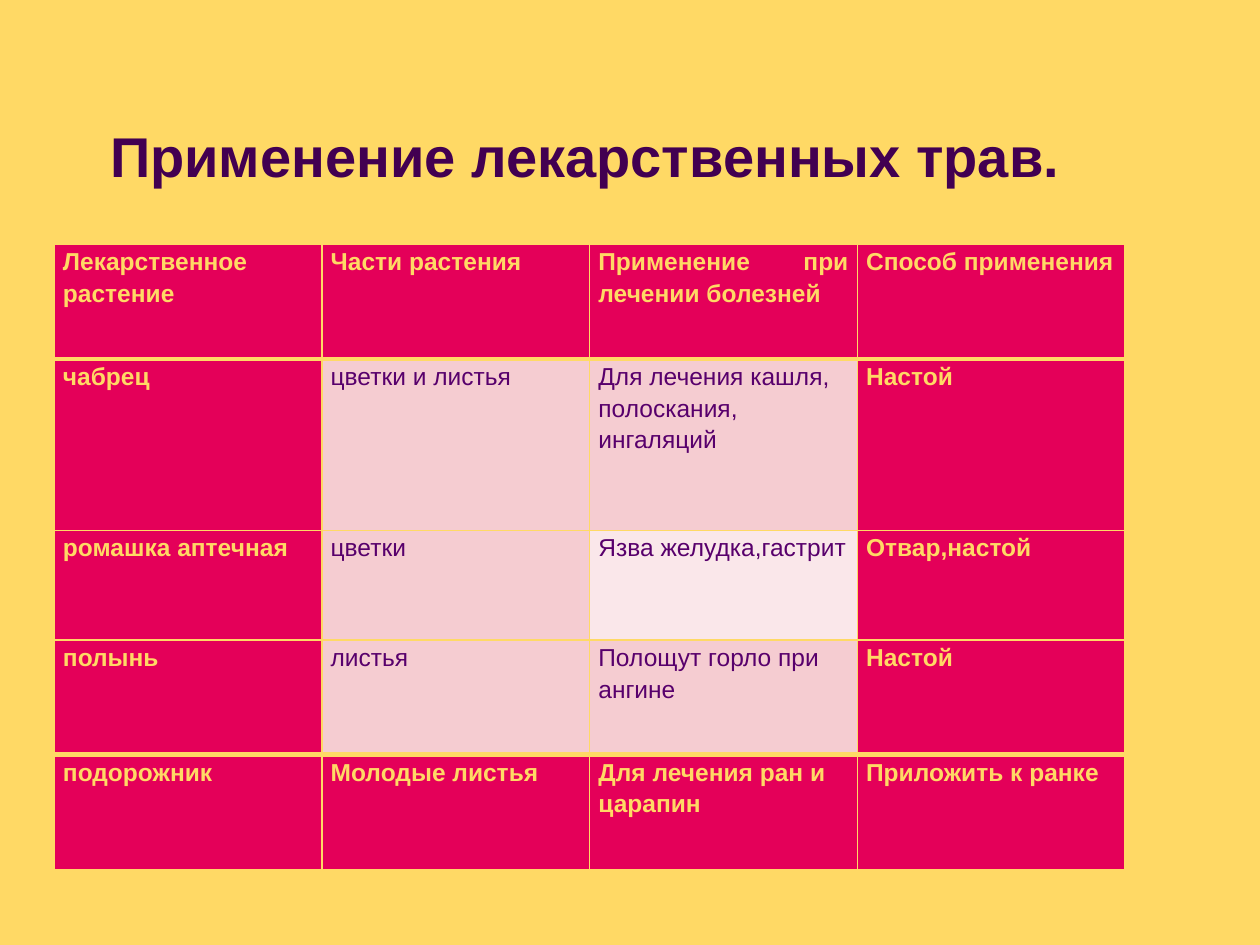
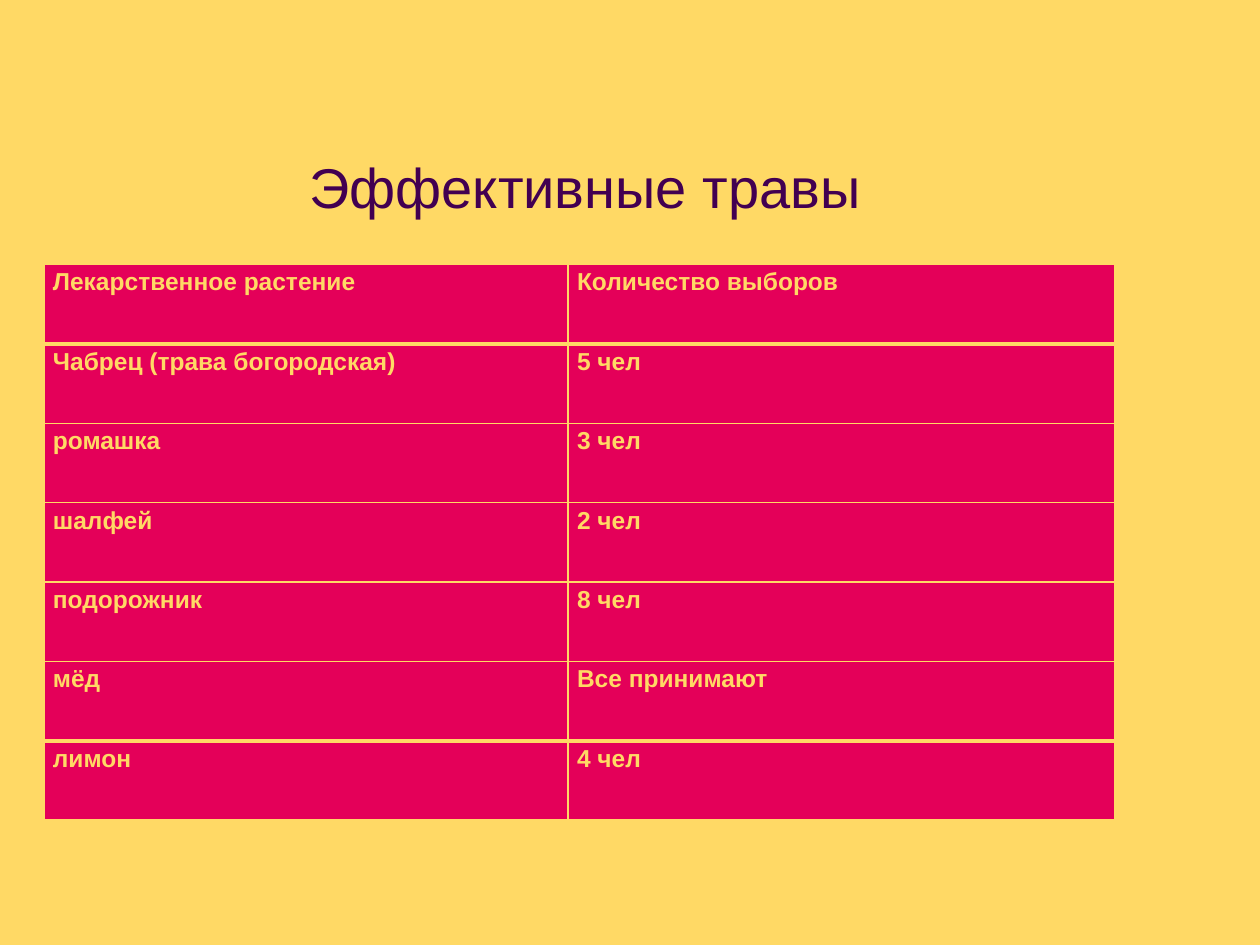
"""Build two slides of herb tables with a shared title and table style."""
from dataclasses import dataclass

from lxml.etree import SubElement
from pptx import Presentation
from pptx.dml.color import RGBColor
from pptx.enum.text import MSO_ANCHOR, PP_ALIGN
from pptx.oxml.ns import qn
from pptx.util import Inches, Pt


@dataclass(frozen=True)
class Theme:
    font: str = "Arial"
    ground: str = "FFD965"
    title: str = "420051"
    strong: str = "E40059"
    soft: str = "F5CCD1"
    pale: str = "FAE7EA"
    ink: str = "58006C"
    head: int = 32
    body: int = 14
    leading: float = 1.15
    thin: int = 1
    thick: int = 3


LOOK = Theme()
WIDE, HIGH = 10, 7.5

USES = dict(
    title="Применение лекарственных трав.", bold=True, top=0.84,
    at=(0.43, 1.94), cols=[2.125] * 4, heights=[0.91, 1.36, 0.87, 0.91, 0.91],
    rows=[
        ("Лекарственное растение", "Части растения",
         "Применение при лечении болезней", "Способ применения"),
        ("чабрец", "цветки и листья",
         "Для лечения кашля, полоскания, ингаляций", "Настой"),
        ("ромашка аптечная", "цветки", "Язва желудка,гастрит", "Отвар,настой"),
        ("полынь", "листья", "Полощут горло при ангине", "Настой"),
        ("подорожник", "Молодые листья", "Для лечения ран и царапин",
         "Приложить к ранке"),
    ],
    tints={(1, 1): LOOK.soft, (1, 2): LOOK.soft,
           (2, 1): LOOK.soft, (2, 2): LOOK.pale,
           (3, 1): LOOK.soft, (3, 2): LOOK.soft},
    even=1,
)
VOTES = dict(
    title="Эффективные травы", bold=False, top=1.09,
    at=(0.35, 2.1), cols=[4.16, 4.34], heights=[0.63] * 7,
    rows=[
        ("Лекарственное растение", "Количество выборов"),
        ("Чабрец (трава богородская)", "5 чел"),
        ("ромашка", "3 чел"),
        ("шалфей", "2 чел"),
        ("подорожник", "8 чел"),
        ("мёд", "Все принимают"),
        ("лимон", "4 чел"),
    ],
    tints={}, even=2,
)


def write(frame, text, size, color, bold, align):
    para = frame.paragraphs[0]
    para.alignment = align
    run = para.add_run()
    run.text = text
    font = run.font
    font.name, font.size, font.bold = LOOK.font, Pt(size), bold
    font.color.rgb = RGBColor.from_string(color)
    return para


def border(cell, above, below):
    props = cell._tc.get_or_add_tcPr()
    sides = dict(L=LOOK.thin, R=LOOK.thin, T=above, B=below)
    for spot, (side, width) in enumerate(sides.items()):
        line = SubElement(props, qn(f"a:ln{side}"), w=str(Pt(width)))
        fill = SubElement(line, qn("a:solidFill"))
        SubElement(fill, qn("a:srgbClr"), val=LOOK.ground)
        props.insert(spot, line)


def add_title(slide, page):
    box = slide.shapes.add_textbox(
        Inches(0.62), Inches(page["top"]), Inches(8.05), Inches(0.78))
    frame = box.text_frame
    frame.word_wrap = True
    frame.vertical_anchor = MSO_ANCHOR.MIDDLE
    write(frame, page["title"], LOOK.head, LOOK.title, page["bold"],
          PP_ALIGN.CENTER)


def add_grid(slide, page):
    rows, cols, heights = page["rows"], page["cols"], page["heights"]
    left, top = page["at"]
    table = slide.shapes.add_table(
        len(rows), len(cols), Inches(left), Inches(top),
        Inches(sum(cols)), Inches(sum(heights))).table
    table.horz_banding = False
    for col, width in zip(table.columns, cols):
        col.width = Inches(width)
    for row, height in zip(table.rows, heights):
        row.height = Inches(height)
    heavy = {1, len(rows) - 1}
    for r, texts in enumerate(rows):
        above, below = (LOOK.thick if edge in heavy else LOOK.thin
                        for edge in (r, r + 1))
        for c, text in enumerate(texts):
            cell = table.cell(r, c)
            tint = page["tints"].get((r, c))
            cell.fill.solid()
            cell.fill.fore_color.rgb = RGBColor.from_string(tint or LOOK.strong)
            cell.margin_left = cell.margin_right = Inches(0.07)
            cell.margin_top = cell.margin_bottom = 0
            even = r == 0 or c < page["even"]
            para = write(cell.text_frame, text, LOOK.body,
                         LOOK.ink if tint else LOOK.ground, not tint,
                         PP_ALIGN.JUSTIFY if even else PP_ALIGN.LEFT)
            para.line_spacing = LOOK.leading
            border(cell, above, below)


def main():
    deck = Presentation()
    deck.slide_width, deck.slide_height = Inches(WIDE), Inches(HIGH)
    for page in (USES, VOTES):
        slide = deck.slides.add_slide(deck.slide_layouts[6])
        fill = slide.background.fill
        fill.solid()
        fill.fore_color.rgb = RGBColor.from_string(LOOK.ground)
        add_title(slide, page)
        add_grid(slide, page)
    deck.save("out.pptx")


if __name__ == "__main__":
    main()
